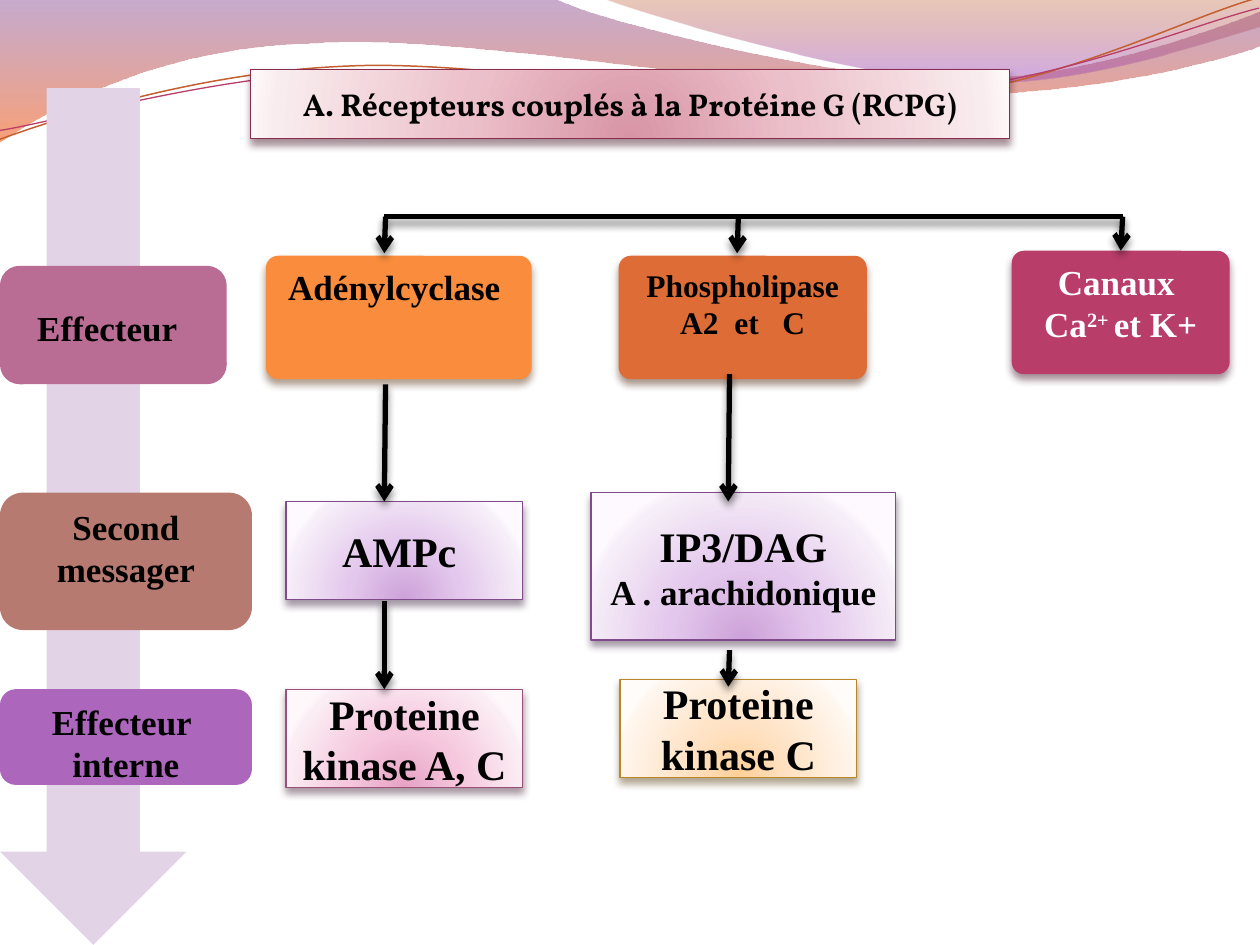
from lxml import etree
from pptx import Presentation
from pptx.dml.color import RGBColor as Rgb
from pptx.enum.shapes import MSO_CONNECTOR as Conn, MSO_SHAPE as Geo
from pptx.enum.text import MSO_ANCHOR as Anchor, PP_ALIGN as Align
from pptx.oxml import parse_xml
from pptx.oxml.ns import qn
from pptx.util import Inches, Pt

NS = "http://schemas.openxmlformats.org/drawingml/2006/main"
HUES = {
    "black": "000000", "white": "FFFFFF", "rose": "B83D68", "rust": "DE6C36",
    "amber": "FA8D3D", "pale": "E3D3E7", "mauve": "B96C94", "clay": "B77A71",
    "violet": "AC66BB", "copper": "C45F30", "plum": "834591", "flame": "F35307",
    "brick": "B74915", "orchid": "A14BB4",
}
SHADES = {
    "black": "000000", "rose": "421424", "rust": "4F2511", "amber": "593114",
    "lilac": "3D2342", "pink": "4A253A", "gold": "594012", "title": "421424",
}
GLOWS = {
    "lilac": ("804B8B", ["CDA2D9", "E3C7EC", "F6EEF8", "FDF9FE"]),
    "pink": ("9A5079", ["E7A3C5", "F5C6DD", "FBEDF4", "FFF8FB"]),
    "gold": ("BA8728", ["FFD098", "FFE3C6", "FFF6ED", "FFFCF9"]),
    "title": ("892C4D", ["D895A5", "ECC0CA", "F9ECEE", "FEF8F9"]),
}
LINEAR = '<a:lin ang="5400000" scaled="0"/>'
ROUND = '<a:path path="circle"><a:fillToRect l="50000" t="130000" r="50000" b="-30000"/></a:path>'
CAST = (f'<a:outerShdw xmlns:a="{NS}" blurRad="57150" dist="38100" dir="5400000" algn="ctr" rotWithShape="0">'
        '<a:srgbClr val="%s"><a:alpha val="48000"/></a:srgbClr></a:outerShdw>')


def blend(shape, stops, way):
    shape.fill.background()
    marks = "".join(
        f'<a:gs pos="{pos * 1000}"><a:srgbClr val="{hue}"><a:alpha val="{alpha * 1000}"/></a:srgbClr></a:gs>'
        for pos, hue, alpha in stops
    )
    old = shape._element.spPr.find(qn("a:noFill"))
    new = parse_xml(f'<a:gradFill xmlns:a="{NS}" rotWithShape="1"><a:gsLst>{marks}</a:gsLst>{way}</a:gradFill>')
    old.getparent().replace(old, new)


def trace(steps, closed):
    pts = [(Inches(s[k]), Inches(s[k + 1])) for s in steps for k in range(0, len(s), 2)]
    pen = shapes.build_freeform(*pts[0], scale=1.0)
    pen.add_line_segments(pts[1:], close=closed)
    shape = pen.convert_to_shape()
    shape.shadow.inherit = False
    legs = iter(list(shape._element.iter(qn("a:lnTo"))))
    for step in steps[1:]:
        leg = next(legs)
        if len(step) == 6:
            curve = etree.Element(qn("a:cubicBezTo"))
            leg.addprevious(curve)
            for part in (leg, next(legs), next(legs)):
                curve.append(part[0])
                part.getparent().remove(part)
    return shape


deck = Presentation()
deck.slide_width, deck.slide_height = Inches(10), Inches(7.5)
slide = deck.slides.add_slide(deck.slide_layouts[6])
shapes = slide.shapes

waves = [
    ([(0, 0), (4.4, -0.01), (4.76, 0.17, 6.64, 0.63, 7.58, 0.63), (8.53, 0.63, 9.58, 0.26, 10, 0.09),
      (10.01, 0.36), (9.83, 0.44, 8.7, 0.76, 7.46, 0.75), (6.22, 0.75, 3.82, 0.28, 2.57, 0.34),
      (1.29, 0.36, 0.46, 0.83, -0.01, 1.13)],
     [(0, HUES["plum"], 45), (100, HUES["flame"], 55)]),
    ([(4.79, -0.01), (5.09, 0.11, 6.82, 0.62, 7.69, 0.65), (8.56, 0.69, 9.61, 0.32, 10, 0.21), (10, 0)],
     [(0, HUES["brick"], 30), (80, HUES["orchid"], 45)]),
]
for steps, stops in waves:
    wave = trace(steps, True)
    wave.line.fill.background()
    blend(wave, stops, LINEAR)

threads = [
    ([(-0.02, 0.87), (0.47, 0.72, 1.58, 0.41, 2.77, 0.42), (3.96, 0.42, 5.91, 0.93, 7.12, 0.9),
      (8.32, 0.87, 9.39, 0.36, 10, 0.22)], "copper", 0.85),
    ([(-0.02, 0.8), (0.46, 0.75, 1.64, 0.45, 2.83, 0.46), (4.03, 0.46, 5.96, 0.88, 7.16, 0.85),
      (8.35, 0.83, 9.42, 0.42, 10.01, 0.3)], "rose", 0.75),
]
for steps, hue, width in threads:
    thread = trace(steps, False)
    thread.rotation = 357.3
    thread.fill.background()
    thread.line.color.rgb = Rgb.from_string(HUES[hue])
    thread.line.width = Pt(width)

TOP, MID = Anchor.TOP, Anchor.MIDDLE
boxes = [
    ("flow", Geo.RIGHT_ARROW, (-2.66, 3.36, 6.8, 1.48), "pale", MID, []),
    ("canals", Geo.ROUNDED_RECTANGLE, (8.03, 1.99, 1.73, 0.98), "rose", TOP,
     [("Canaux ", 20), ("Ca^2+ ^et K+", 20)]),
    ("lipase", Geo.ROUNDED_RECTANGLE, (4.91, 2.03, 1.97, 0.98), "rust", TOP,
     [("Phospholipase A2  et   C", 18)]),
    ("cyclase", Geo.ROUNDED_RECTANGLE, (2.11, 2.03, 2.11, 0.98), "amber", TOP, [("Adénylcyclase ", 20)]),
    ("inner", Geo.ROUNDED_RECTANGLE, (0, 5.47, 2, 0.76), "violet", TOP, [("Effecteur ", 20), ("interne", 20)]),
    ("second", Geo.ROUNDED_RECTANGLE, (0, 3.91, 2, 1.09), "clay", TOP, [("Second messager", 20)]),
    ("outer", Geo.ROUNDED_RECTANGLE, (0, 2.11, 1.8, 0.94), "mauve", MID, []),
    ("label", None, (0.08, 2.16, 1.64, 0.85), None, MID, [("Effecteur", 20)]),
    ("ampc", Geo.RECTANGLE, (2.27, 3.98, 1.88, 0.78), "lilac", MID, [("AMPc ", 24)]),
    ("kinase a", Geo.RECTANGLE, (2.27, 5.47, 1.88, 0.78), "pink", MID, [("Proteine kinase A, C ", 24)]),
    ("ip3", Geo.RECTANGLE, (4.69, 3.91, 2.42, 1.17), "lilac", MID, [("IP3/DAG", 24), ("A . arachidonique", 20)]),
    ("kinase c", Geo.RECTANGLE, (4.92, 5.39, 1.88, 0.78), "gold", MID, [("Proteine kinase C", 24)]),
    ("title", Geo.RECTANGLE, (1.99, 0.55, 6.02, 0.55), "title", MID,
     [("A. Récepteurs couplés à la Protéine G (RCPG)", 18)]),
]
made = {}
for name, geo, place, hue, anchor, lines in boxes:
    spot = list(map(Inches, place))
    box = shapes.add_shape(geo, *spot) if geo else shapes.add_textbox(*spot)
    made[name] = box
    if hue in GLOWS:
        edge, tints = GLOWS[hue]
        blend(box, [(pos, tint, 100) for pos, tint in zip((0, 43, 93, 100), tints)], ROUND)
        box.line.color.rgb = Rgb.from_string(edge)
        box.line.width = Pt(0.75)
    elif hue:
        box.fill.solid()
        box.fill.fore_color.rgb = Rgb.from_string(HUES[hue])
        box.line.fill.background()
    if hue:
        box.shadow.inherit = False
    if hue in SHADES:
        box._element.spPr.find(qn("a:effectLst")).append(parse_xml(CAST % SHADES[hue]))
    frame = box.text_frame
    frame.word_wrap = True
    frame.vertical_anchor = anchor
    for n, (text, size) in enumerate(lines):
        para = frame.add_paragraph() if n else frame.paragraphs[0]
        para.alignment = Align.CENTER
        for k, part in enumerate(text.split("^")):
            run = para.add_run()
            run.text = part
            style = {"size": Pt(size), "bold": True, "name": "Vollkorn" if name == "title" else "Times New Roman"}
            for key, value in style.items():
                setattr(run.font, key, value)
            run.font.color.rgb = Rgb.from_string(HUES["white" if name == "canals" else "black"])
            if k % 2:
                run._r.get_or_add_rPr().set("baseline", "30000")

made["flow"].rotation = 90
for name in ("canals", "lipase", "cyclase"):
    made[name].adjustments[0] = 0.1

frame = made["label"].text_frame
for side in ("left", "top", "right", "bottom"):
    setattr(frame, f"margin_{side}", Inches(0.16))
para = frame.paragraphs[0]
para.line_spacing = 0.9
gap = para.add_run()
gap.text = " "
for key, value in {"size": Pt(28), "bold": False, "name": "Times New Roman"}.items():
    setattr(gap.font, key, value)

links = [
    (3.05, 1.72, 8.91, 1.72, False), (5.86, 1.72, 5.85, 2.01, True),
    (8.91, 1.72, 8.89, 1.99, True), (3.06, 1.72, 3.05, 2.01, True),
    (5.79, 5.16, 5.78, 5.45, True), (5.79, 2.97, 5.78, 3.98, True),
    (3.05, 4.77, 3.05, 5.47, True), (3.06, 3.05, 3.05, 3.98, True),
]
for *ends, head in links:
    link = shapes.add_connector(Conn.STRAIGHT, *map(Inches, ends))
    link.line.color.rgb = Rgb.from_string(HUES["black"])
    link.line.width = Pt(3)
    if head:
        etree.SubElement(link.line._get_or_add_ln(), qn("a:tailEnd"), type="arrow")
    cast = etree.SubElement(link._element.spPr, qn("a:effectLst"))
    cast.append(parse_xml(CAST % SHADES["black"]))
    if ends[2] == 8.89:
        link.end_connect(made["canals"], 0)

deck.save("out.pptx")
